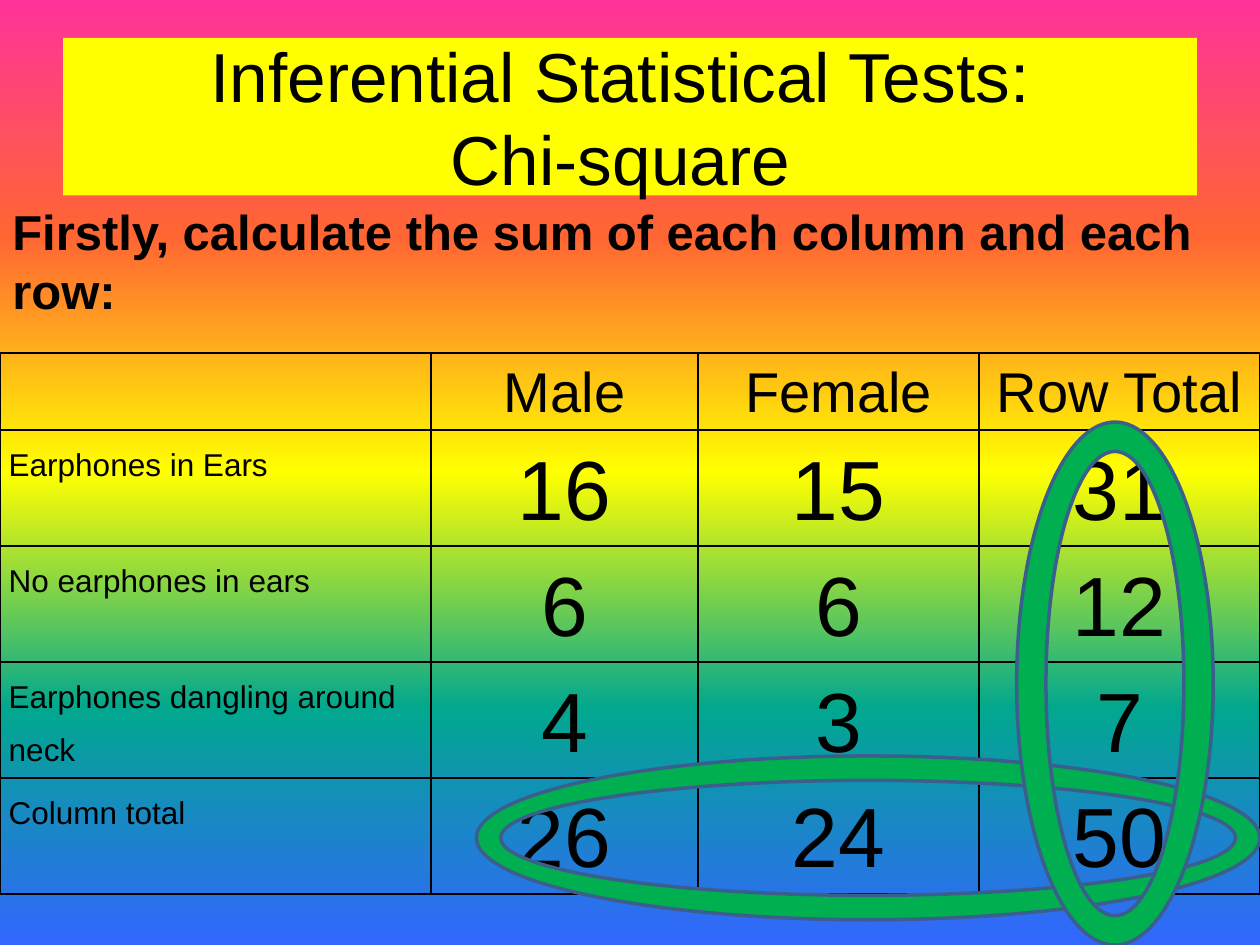
from pptx import Presentation
from pptx.dml.color import RGBColor
from pptx.enum.shapes import MSO_SHAPE
from pptx.enum.text import MSO_ANCHOR, MSO_AUTO_SIZE, PP_ALIGN
from pptx.oxml.ns import qn
from pptx.util import Pt
from lxml.etree import SubElement

BLACK = RGBColor(0x00, 0x00, 0x00)
YELLOW = RGBColor(0xFF, 0xFF, 0x00)
GREEN = RGBColor(0x00, 0xB0, 0x50)
SLATE = RGBColor(0x3A, 0x5F, 0x8C)
RAINBOW = [
    RGBColor(0xFF, 0x33, 0x99),
    RGBColor(0xFF, 0x66, 0x33),
    YELLOW,
    RGBColor(0x01, 0xA7, 0x8F),
    RGBColor(0x33, 0x66, 0xFF),
]
ROWS = [
    ["", "Male", "Female", "Row Total"],
    ["Earphones in Ears", "16", "15", "31"],
    ["No earphones in ears", "6", "6", "12"],
    ["Earphones dangling around neck", "4", "3", "7"],
    ["Column total", "26", "24", "50"],
]
COLUMN_WIDTHS = [246.4, 152.6, 160.4, 160.6]
ROW_HEIGHTS = [44.2] + [66.25] * 4


def style(para, size, align, bold=False):
    para.alignment = align
    para.font.name = "Arial"
    para.font.size = Pt(size)
    para.font.bold = bold
    para.font.color.rgb = BLACK


def add_border(cell):
    properties = cell._tc.get_or_add_tcPr()
    for side in ("a:lnL", "a:lnR", "a:lnT", "a:lnB"):
        line = SubElement(properties, qn(side), w=str(Pt(1)))
        fill = SubElement(line, qn("a:solidFill"))
        SubElement(fill, qn("a:srgbClr"), val=str(BLACK))


deck = Presentation()
deck.slide_width, deck.slide_height = Pt(720), Pt(540)
page = deck.slides.add_slide(deck.slide_layouts[5])

background = page.background.fill
background.gradient()
background.gradient_angle = 270
stops = page.element.find(".//" + qn("a:gsLst"))
for stop in list(stops):
    stops.remove(stop)
for index, color in enumerate(RAINBOW):
    stop = SubElement(stops, qn("a:gs"), pos=str(index * 25000))
    SubElement(stop, qn("a:srgbClr"), val=str(color))

title = page.shapes.title
title.left, title.top, title.width, title.height = Pt(36), Pt(21.6), Pt(648), Pt(90)
title.fill.solid()
title.fill.fore_color.rgb = YELLOW
title.text_frame.text = "Inferential Statistical Tests: \vChi-square "
title.text_frame.auto_size = MSO_AUTO_SIZE.NONE
title.text_frame.vertical_anchor = MSO_ANCHOR.MIDDLE
style(title.text_frame.paragraphs[0], 39.6, PP_ALIGN.CENTER)

box = page.shapes.add_textbox(Pt(0), Pt(111.6), Pt(690.5), Pt(75))
box.text_frame.word_wrap = True
box.text_frame.text = "Firstly, calculate the sum of each column and each row:"
style(box.text_frame.paragraphs[0], 28, PP_ALIGN.LEFT, bold=True)

frame = page.shapes.add_table(
    len(ROWS), len(COLUMN_WIDTHS), Pt(0), Pt(201.6), Pt(720), Pt(sum(ROW_HEIGHTS))
)
table = frame.table
table.first_row = False
table.horz_banding = False
for column, width in zip(table.columns, COLUMN_WIDTHS):
    column.width = Pt(width)
for row, height in zip(table.rows, ROW_HEIGHTS):
    row.height = Pt(height)

for r, texts in enumerate(ROWS):
    for c, text in enumerate(texts):
        cell = table.cell(r, c)
        cell.margin_left = cell.margin_right = Pt(5)
        cell.margin_top = cell.margin_bottom = Pt(0)
        add_border(cell)
        cell.fill.background()
        cell.text = text
        para = cell.text_frame.paragraphs[0]
        if c == 0:
            style(para, 18, PP_ALIGN.LEFT)
            para.line_spacing = 1.5
        else:
            style(para, 32 if r == 0 else 48, PP_ALIGN.CENTER)
            para.line_spacing = 1.15
            if r == 4 or (r > 0 and c == 3):
                indents = para._p.get_or_add_pPr()
                indents.set("marL", str(Pt(10.8)))
                indents.set("indent", str(Pt(-10.8)))

for left, top, width, height in [(272.2, 432, 447.8, 93.6), (581, 241.2, 112.3, 298.8)]:
    ring = page.shapes.add_shape(
        MSO_SHAPE.DONUT, Pt(left), Pt(top), Pt(width), Pt(height)
    )
    ring.adjustments[0] = 0.149
    ring.shadow.inherit = False
    ring.fill.solid()
    ring.fill.fore_color.rgb = GREEN
    ring.line.color.rgb = SLATE
    ring.line.width = Pt(2)

deck.save("out.pptx")
